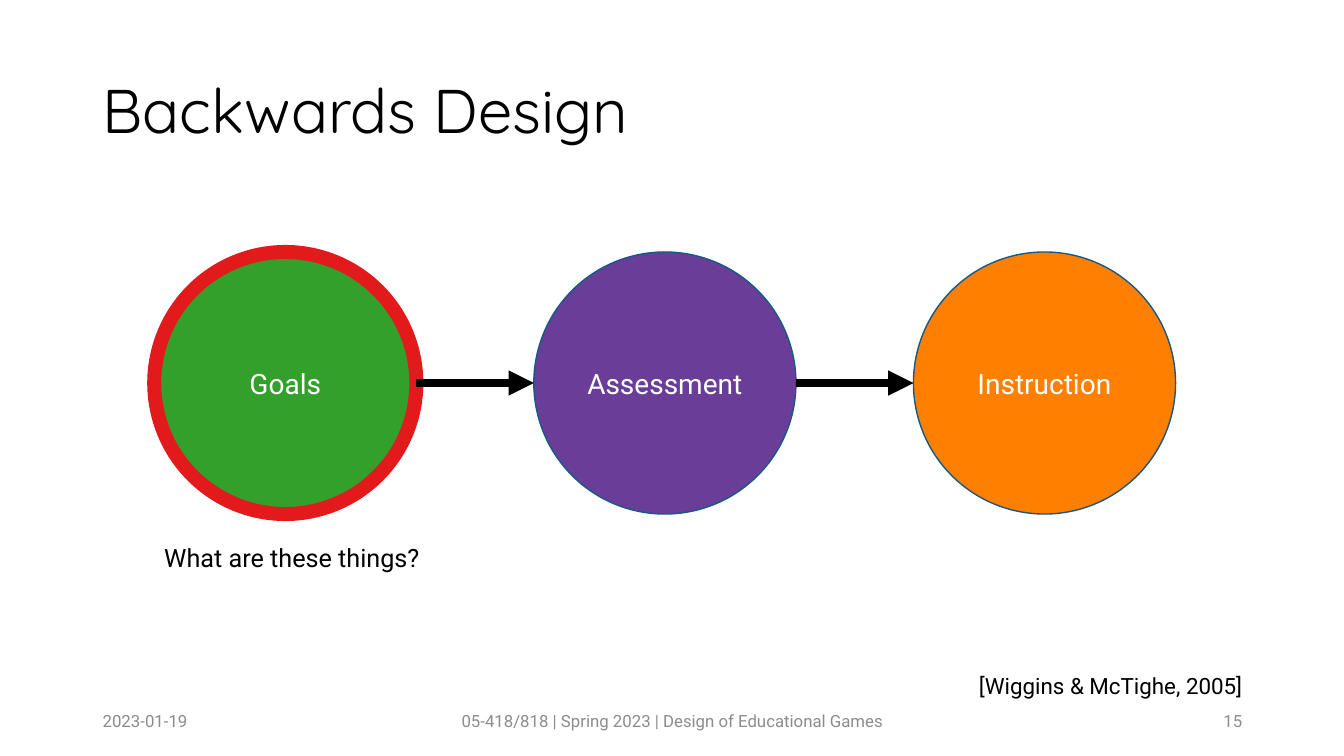
"""Build the Backwards Design slide: three stages joined by arrows."""
from pptx import Presentation
from pptx.dml.color import RGBColor
from pptx.enum.shapes import MSO_CONNECTOR as CONN, MSO_SHAPE as SHAPE
from pptx.enum.text import MSO_ANCHOR as ANCHOR, PP_ALIGN as ALIGN
from pptx.oxml.ns import qn
from pptx.util import Inches, Pt
from lxml import etree

THEME = {
    "heading": "Quicksand", "body": "Roboto",
    "black": "000000", "white": "FFFFFF", "muted": "8C8C8C", "outline": "175985",
    "title": 44, "stage": 20, "question": 18, "citation": 16, "footer": 12,
}

STAGES = [
    ("Goals", "33A02C", "E31A1C", 10),
    ("Assessment", "6A3D99", THEME["outline"], 1),
    ("Instruction", "FF7F00", THEME["outline"], 1),
]
LEFT, TOP, DIAMETER, PITCH = 1.53, 2.5, 2.6, 3.765

TEXTS = [
    ("Backwards Design", (0.92, 0.4, 11.5, 1.45), "title", "heading", "black", ALIGN.LEFT, ANCHOR.MIDDLE, 0.9),
    ("[Wiggins & McTighe, 2005]", (0.92, 6.65, 11.5, 0.3), "citation", "body", "black", ALIGN.RIGHT, ANCHOR.TOP, 0.9),
    ("What are these things?", (LEFT, 5.33, 2.79, 0.4), "question", "body", "black", ALIGN.LEFT, ANCHOR.TOP, 1.0),
    ("2023-01-19", (0.92, 6.95, 3, 0.4), "footer", "body", "muted", ALIGN.LEFT, ANCHOR.MIDDLE, 1.0),
    ("05-418/818 | Spring 2023 | Design of Educational Games", (4.42, 6.95, 4.5, 0.4),
     "footer", "body", "muted", ALIGN.CENTER, ANCHOR.MIDDLE, 1.0),
    ("15", (9.42, 6.95, 3, 0.4), "footer", "body", "muted", ALIGN.RIGHT, ANCHOR.MIDDLE, 1.0),
]


def rgb(code):
    return RGBColor.from_string(code)


def write(sp, text, size, font, color, align, anchor, spacing=1.0):
    tf = sp.text_frame
    tf.word_wrap = True
    tf.vertical_anchor = anchor
    p = tf.paragraphs[0]
    p.text = text
    p.alignment = align
    p.line_spacing = spacing
    p.font.name = THEME[font]
    p.font.size = Pt(THEME[size])
    p.font.color.rgb = rgb(THEME[color])


def add_stage(s, x, name, fill, outline, width):
    sp = s.shapes.add_shape(SHAPE.OVAL, *map(Inches, (x, TOP, DIAMETER, DIAMETER)))
    sp.shadow.inherit = False
    sp.fill.solid()
    sp.fill.fore_color.rgb = rgb(fill)
    sp.line.color.rgb = rgb(outline)
    sp.line.width = Pt(width)
    write(sp, name, "stage", "body", "white", ALIGN.CENTER, ANCHOR.MIDDLE)


def add_arrow(s, x1, x2):
    y = TOP + DIAMETER / 2
    arrow = s.shapes.add_connector(CONN.STRAIGHT, *map(Inches, (x1, y, x2, y)))
    arrow.line.color.rgb = rgb(THEME["black"])
    arrow.line.width = Pt(6)
    sp_pr = arrow.element.spPr
    etree.SubElement(sp_pr.find(qn("a:ln")), qn("a:tailEnd"), type="triangle")
    etree.SubElement(sp_pr, qn("a:effectLst"))


def main():
    prs = Presentation()
    prs.slide_width, prs.slide_height = Inches(13.33), Inches(7.5)
    s = prs.slides.add_slide(prs.slide_layouts[6])
    lefts = [LEFT + i * PITCH for i in range(len(STAGES))]
    for x, stage in zip(lefts, STAGES):
        add_stage(s, x, *stage)
    for x, following in zip(lefts, lefts[1:]):
        add_arrow(s, x + DIAMETER, following)
    for text, box, *style in TEXTS:
        write(s.shapes.add_textbox(*map(Inches, box)), text, *style)
    prs.save("out.pptx")


if __name__ == "__main__":
    main()
